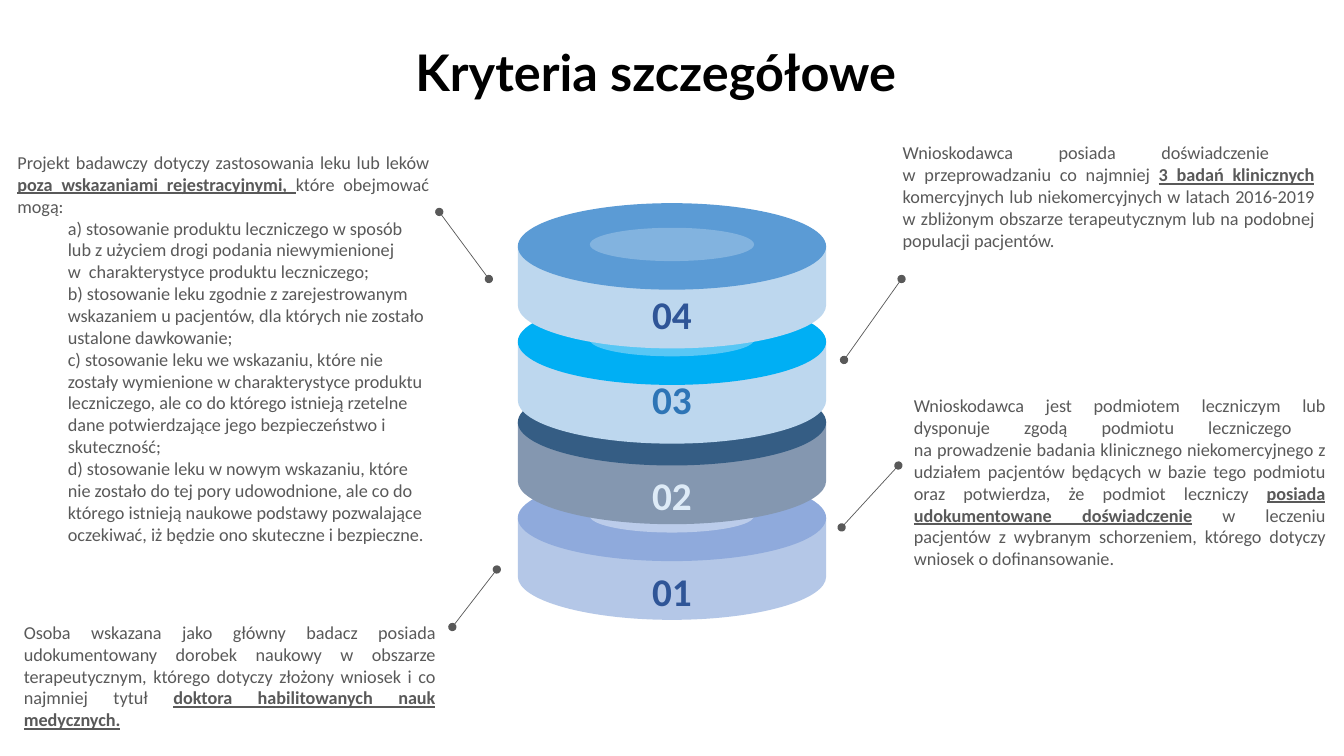
import pptx
import pptx.dml.color
import pptx.enum.shapes
import pptx.enum.text
import pptx.oxml.ns
import pptx.util
from lxml import etree
from typing import NamedTuple

Cm, Pt, qn = pptx.util.Cm, pptx.util.Pt, pptx.oxml.ns.qn
ALIGN = pptx.enum.text.PP_ALIGN
FIT = pptx.enum.text.MSO_AUTO_SIZE

COLORS = {
    "title": "000000", "body": "595959", "white": "FFFFFF",
    "periwinkle": "8FAADC", "lavender": "B4C7E7",
    "navy": "355D84", "slate": "8497B0",
    "cyan": "00AFF4", "blue": "5B9BD5",
    "sky": "BDD7EE", "ice": "DEEBF7",
    "royal": "2F5597", "steel": "2E75B6",
}
TITLE_FONT = {"name": "Lato", "size": Pt(36), "bold": True}
NUMBER_FONT = {"name": "Calibri", "size": Pt(28), "bold": True}
BODY_FONT = {"name": "Calibri", "size": Pt(13)}
EMPHASIS = {"bold": True, "underline": True}
NOTE_FRAME = {"margin_left": 0, "auto_size": FIT.SHAPE_TO_FIT_TEXT}

# Disc geometry in centimetres
DISC_LEFT, DISC_W, RIM_H, WALL_H = 13.05, 7.77, 2.18, 1.48
HOLE_W, HOLE_H, HOLE_DROP = 4.14, 0.84, 0.62
NUMBER_W, NUMBER_H = 1.52, 1.45
ARC_PULL = 0.55  # Bezier handle length for a quarter ellipse
NOTE_W = 10.62
ITEM_INDENT = 1.27


class Disc(NamedTuple):
    number: str
    top: float
    number_top: float
    lid: str
    wall: str
    hole: str
    ink: str


class Note(NamedTuple):
    """Text between asterisks is emphasised; items are indented below it."""
    left: float
    top: float
    height: float
    text: str
    items: tuple[str, ...] = ()


class Link(NamedTuple):
    x1: float
    y1: float
    x2: float
    y2: float


DISCS = [
    Disc("01", 11.96, 14.17, "periwinkle", "lavender", "white", "royal"),
    Disc("02", 9.55, 11.75, "navy", "slate", "white", "ice"),
    Disc("03", 7.52, 9.32, "cyan", "sky", "ice", "steel"),
    Disc("04", 5.12, 7.18, "blue", "sky", "sky", "royal"),
]
LINKS = [
    Link(21.21, 13.29, 22.64, 11.73),
    Link(21.27, 9.07, 22.72, 7.03),
    Link(11.4, 15.8, 12.52, 14.35),
    Link(11.07, 5.34, 12.32, 7.03),
]
NOTES = [
    Note(23.03, 9.81, 4.67,
         "Wnioskodawca jest podmiotem leczniczym lub dysponuje zgodą podmiotu leczniczego \n"
         "na prowadzenie badania klinicznego niekomercyjnego z udziałem pacjentów będących "
         "w bazie tego podmiotu oraz potwierdza, że podmiot leczniczy "
         "*posiada udokumentowane doświadczenie* w leczeniu pacjentów z wybranym "
         "schorzeniem, którego dotyczy wniosek o dofinansowanie."),
    Note(22.75, 3.44, 3.02,
         "Wnioskodawca posiada doświadczenie \n"
         "w przeprowadzaniu co najmniej *3 badań klinicznych *komercyjnych lub "
         "niekomercyjnych w latach 2016-2019 w zbliżonym obszarze terapeutycznym lub "
         "na podobnej populacji pacjentów."),
    Note(0.44, 3.64, 10.26,
         "Projekt badawczy dotyczy zastosowania leku lub leków "
         "*poza wskazaniami rejestracyjnymi, *które obejmować mogą:",
         ("a) stosowanie produktu leczniczego w sposób lub z użyciem drogi podania "
          "niewymienionej \nw  charakterystyce produktu leczniczego;",
          "b) stosowanie leku zgodnie z zarejestrowanym wskazaniem u pacjentów, dla "
          "których nie zostało ustalone dawkowanie;",
          "c) stosowanie leku we wskazaniu, które nie zostały wymienione w "
          "charakterystyce produktu leczniczego, ale co do którego istnieją rzetelne "
          "dane potwierdzające jego bezpieczeństwo i skuteczność;",
          "d) stosowanie leku w nowym wskazaniu, które nie zostało do tej pory "
          "udowodnione, ale co do którego istnieją naukowe podstawy pozwalające "
          "oczekiwać, iż będzie ono skuteczne i bezpieczne.")),
    Note(0.6, 15.52, 3.02,
         "Osoba wskazana jako główny badacz posiada udokumentowany dorobek naukowy w "
         "obszarze terapeutycznym, którego dotyczy złożony wniosek i co najmniej tytuł "
         "*doktora habilitowanych nauk medycznych.*"),
]


def rgb(color: str) -> pptx.dml.color.RGBColor:
    return pptx.dml.color.RGBColor.from_string(COLORS[color])


def apply(target, values: dict) -> None:
    for name, value in values.items():
        setattr(target, name, value)


def add_child(parent, tag: str, **attrs: str):
    return etree.SubElement(parent, qn(tag), attrs)


def paint(sp, color: str) -> None:
    sp.shadow.inherit = False
    sp.fill.solid()
    sp.fill.fore_color.rgb = rgb(color)
    sp.line.fill.background()


def add_box(s, left: float, top: float, width: float, height: float, frame: dict):
    """Add a middle-anchored text box and return its text frame."""
    tf = s.shapes.add_textbox(Cm(left), Cm(top), Cm(width), Cm(height)).text_frame
    apply(tf, {"word_wrap": True,
               "vertical_anchor": pptx.enum.text.MSO_ANCHOR.MIDDLE} | frame)
    return tf


def write(p, text: str, font: dict, color: str, align) -> None:
    p.alignment = align
    for i, part in enumerate(text.split("*")):
        for j, line in enumerate(part.split("\n")):
            if j:
                p.add_line_break()
            if line:
                r = p.add_run()
                r.text = line
                apply(r.font, font | (EMPHASIS if i % 2 else {}))
                r.font.color.rgb = rgb(color)


def add_ellipse(shapes, left: float, top: float, width: float, height: float, color: str):
    sp = shapes.add_shape(pptx.enum.shapes.MSO_SHAPE.OVAL,
                          Cm(left), Cm(top), Cm(width), Cm(height))
    paint(sp, color)
    return sp


def add_wall(shapes, top: float, color: str) -> None:
    """Draw a rectangle whose bottom edge is half an ellipse."""
    rx, ry = DISC_W / 2, RIM_H / 2
    outline = [(DISC_W, 0), (DISC_W, WALL_H), (rx, WALL_H + ry), (0, WALL_H)]
    builder = shapes.build_freeform(Cm(DISC_LEFT), Cm(top))
    builder.add_line_segments([(Cm(DISC_LEFT + x), Cm(top + y)) for x, y in outline])
    sp = builder.convert_to_shape()
    paint(sp, color)
    pull_x, pull_y = rx * ARC_PULL, WALL_H + ry * ARC_PULL
    handles = [[(DISC_W, pull_y), (rx + pull_x, WALL_H + ry)],
               [(rx - pull_x, WALL_H + ry), (0, pull_y)]]
    quarters = list(sp._element.iter(qn("a:lnTo")))[2:4]
    for quarter, points in zip(quarters, handles):
        curve = etree.Element(qn("a:cubicBezTo"))
        for x, y in points:
            add_child(curve, "a:pt", x=str(Cm(x)), y=str(Cm(y)))
        curve.append(quarter[0])
        quarter.getparent().replace(quarter, curve)


def draw_disc(s, disc: Disc) -> None:
    shapes = s.shapes.add_group_shape().shapes
    add_wall(shapes, disc.top + RIM_H / 2, disc.wall)
    add_ellipse(shapes, DISC_LEFT, disc.top, DISC_W, RIM_H, disc.lid)
    hole = add_ellipse(shapes, DISC_LEFT + (DISC_W - HOLE_W) / 2,
                       disc.top + HOLE_DROP, HOLE_W, HOLE_H, disc.hole)
    tint = next(hole._element.spPr.iter(qn("a:srgbClr")))
    add_child(tint, "a:alpha", val="40000")


def draw_number(s, disc: Disc) -> None:
    left = DISC_LEFT + (DISC_W - NUMBER_W) / 2
    tf = add_box(s, left, disc.number_top, NUMBER_W, NUMBER_H,
                 {"word_wrap": False, "auto_size": FIT.SHAPE_TO_FIT_TEXT})
    write(tf.paragraphs[0], disc.number, NUMBER_FONT, disc.ink, ALIGN.CENTER)


def draw_link(s, link: Link) -> None:
    c = s.shapes.add_connector(pptx.enum.shapes.MSO_CONNECTOR.STRAIGHT,
                               *(Cm(v) for v in link))
    c.line.width = Pt(0.5)
    c.line.color.rgb = rgb("body")
    for end in ("a:headEnd", "a:tailEnd"):
        add_child(c.line._ln, end, type="oval")
    add_child(c._element.spPr, "a:effectLst")


def draw_note(s, note: Note) -> None:
    tf = add_box(s, note.left, note.top, NOTE_W, note.height, NOTE_FRAME)
    write(tf.paragraphs[0], note.text, BODY_FONT, "body", ALIGN.JUSTIFY)
    for item in note.items:
        p = tf.add_paragraph()
        p.level = 1
        pPr = p._p.get_or_add_pPr()
        pPr.set("marL", str(Cm(ITEM_INDENT)))
        pPr.set("indent", "0")
        write(p, item, BODY_FONT, "body", ALIGN.LEFT)


def main() -> None:
    prs = pptx.Presentation()
    prs.slide_width, prs.slide_height = Cm(33.87), Cm(19.05)
    s = prs.slides.add_slide(prs.slide_layouts[6])
    p = add_box(s, 10.22, 0.43, 13.44, 2.92, {}).paragraphs[0]
    p.line_spacing = 0.9
    write(p, "Kryteria szczegółowe", TITLE_FONT, "title", ALIGN.LEFT)
    for draw, elements in ((draw_disc, DISCS), (draw_number, DISCS),
                           (draw_link, LINKS), (draw_note, NOTES)):
        for element in elements:
            draw(s, element)
    prs.save("out.pptx")


if __name__ == "__main__":
    main()
